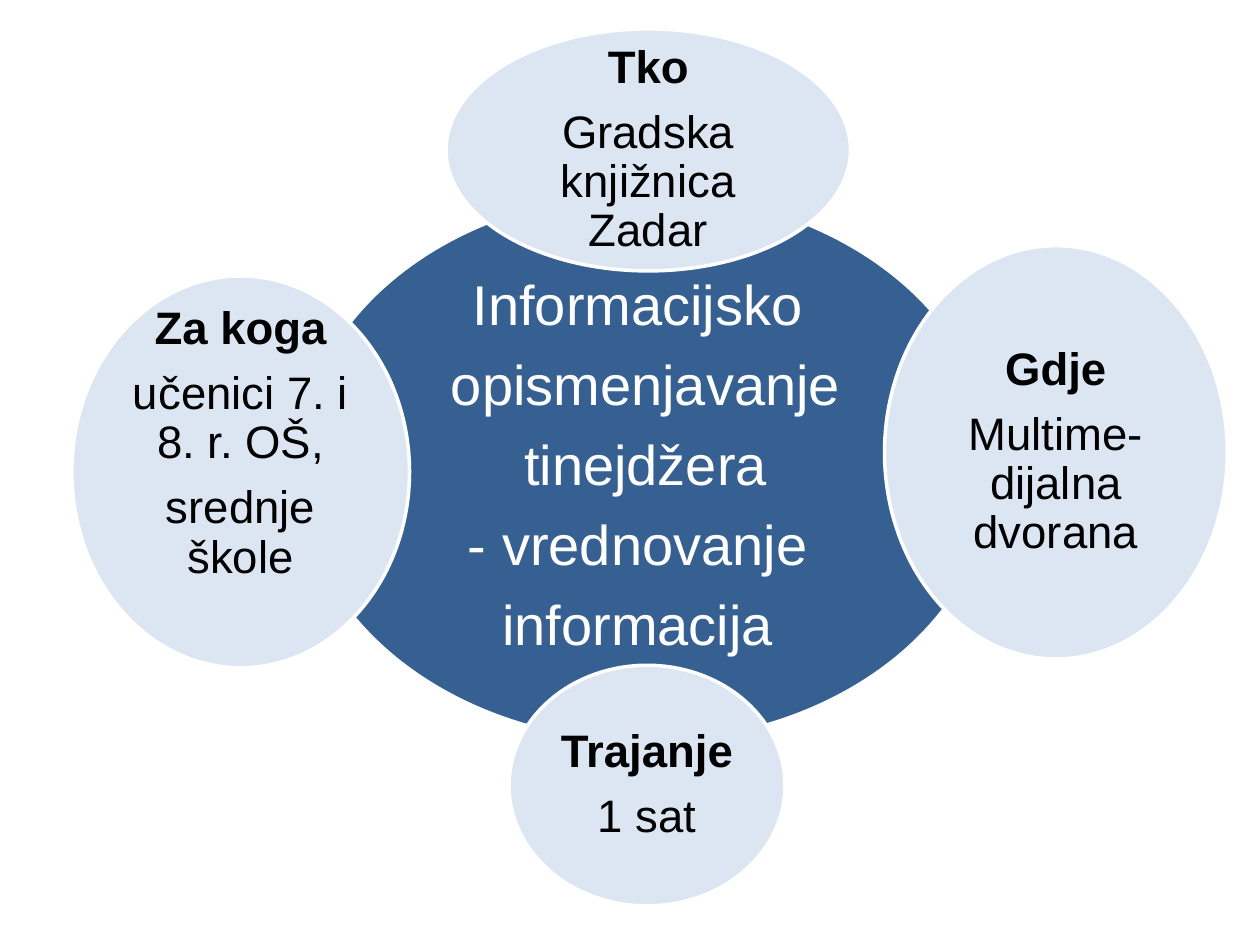
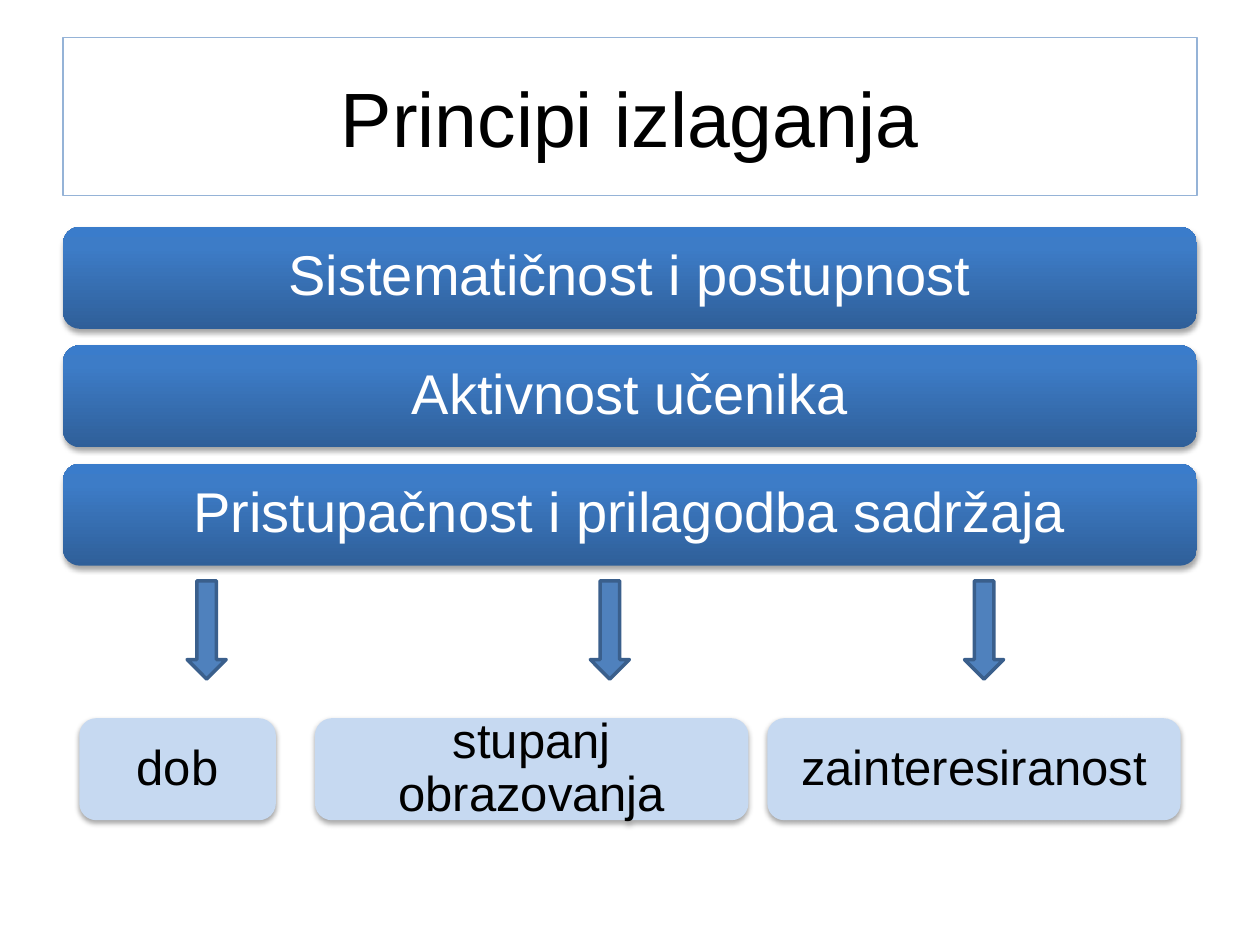
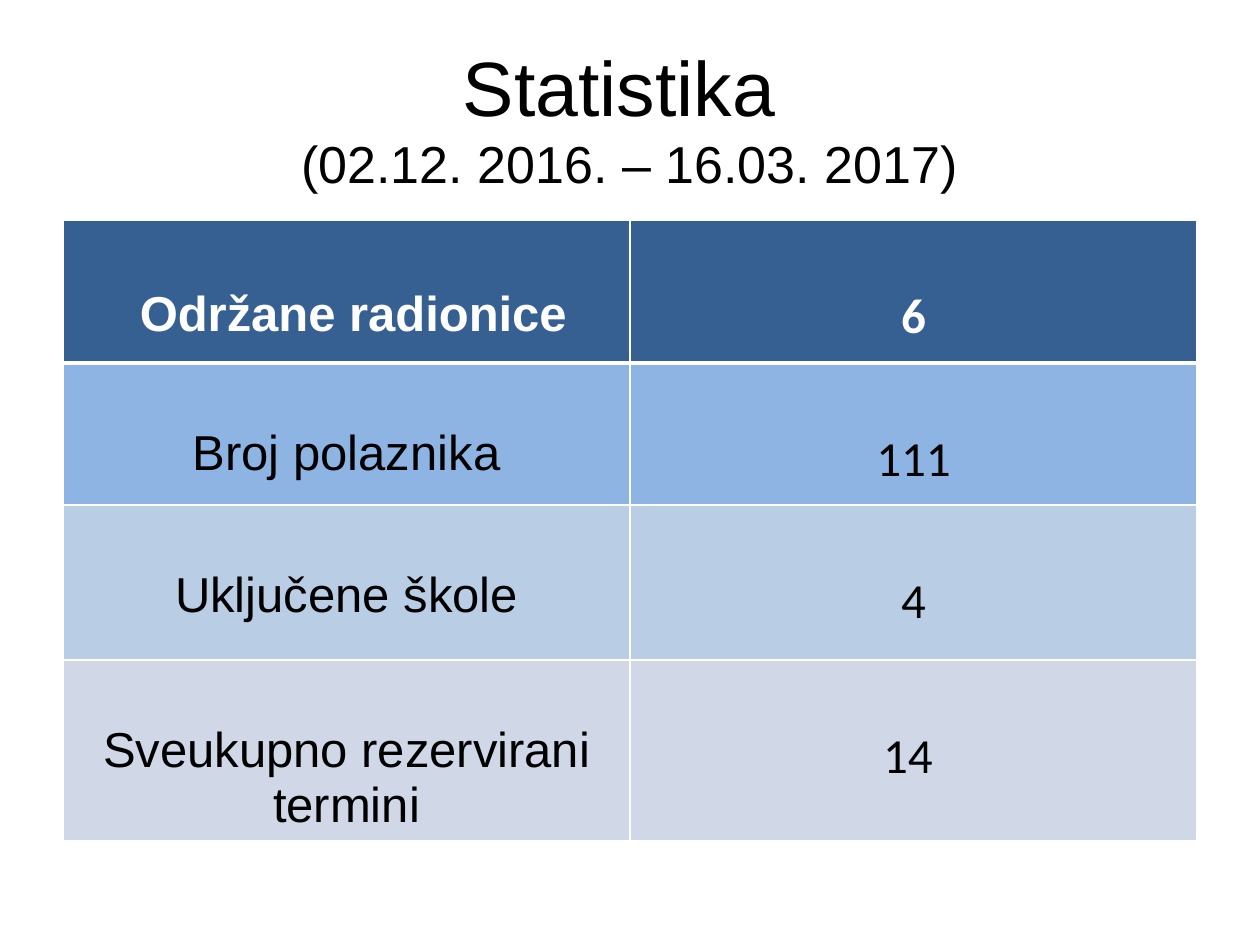
import copy

import pptx
import pptx.dml.color
import pptx.enum.shapes
import pptx.enum.text
import pptx.oxml
import pptx.oxml.ns
import pptx.util

Inches = pptx.util.Inches
Pt = pptx.util.Pt
SHAPES = pptx.enum.shapes.MSO_SHAPE
qn = pptx.oxml.ns.qn

COLORS = {
    "black": "000000",
    "white": "FFFFFF",
    "navy": "376092",
    "pale": "DCE6F2",
    "light": "C6D9F1",
    "frame": "95B3D7",
    "arrow": "4F81BD",
    "arrow_edge": "3A5F8C",
    "row_1": "8EB4E3",
    "row_2": "B9CDE5",
    "row_3": "D0D8E8",
}
BAR_GRADIENT = [(0, "2F5F99"), (0.8, "3D7CC7"), (1, "3A7CCB")]
DRAWING_NS = 'xmlns:a="http://schemas.openxmlformats.org/drawingml/2006/main"'
SHADOW = (
    f'<a:effectLst {DRAWING_NS}><a:outerShdw blurRad="{Pt(3.1)}" dist="{Pt(1.8)}" '
    'dir="5400000" rotWithShape="0"><a:srgbClr val="000000"><a:alpha val="35000"/>'
    "</a:srgbClr></a:outerShdw></a:effectLst>"
)


def rgb(value):
    return pptx.dml.color.RGBColor.from_string(value)


class Deck:
    """Holds the presentation, its shared style and the current slide."""

    font = "Arial"

    def __init__(self):
        self.presentation = pptx.Presentation()
        self.presentation.slide_width = Inches(10)
        self.presentation.slide_height = Inches(7.5)
        self.slide = None

    def new_slide(self):
        self.slide = self.presentation.slides.add_slide(self.presentation.slide_layouts[6])

    def format_paragraph(self, paragraph, size, color, bold=False, font=None):
        paragraph.alignment = pptx.enum.text.PP_ALIGN.CENTER
        for run in paragraph.runs:
            run.font.name = font or self.font
            run.font.size = Pt(size)
            run.font.bold = bold
            run.font.color.rgb = rgb(COLORS[color])

    def title(self, text, sizes, framed=False):
        """Centred title; sizes gives the size of each of its lines."""
        box = self.slide.shapes.add_textbox(Inches(0.5), Inches(0.3), Inches(9), Inches(1.25))
        frame = box.text_frame
        frame.word_wrap = True
        frame.vertical_anchor = pptx.enum.text.MSO_ANCHOR.MIDDLE
        frame.text = text
        paragraph = frame.paragraphs[0]
        self.format_paragraph(paragraph, sizes[0], "black")
        for run, size in zip(paragraph.runs, sizes):
            run.font.size = Pt(size)
        if framed:
            box.line.color.rgb = rgb(COLORS["frame"])
            box.line.width = Pt(0.75)

    def shape(self, kind, left, top, width, height, fill=None, line=None):
        shape = self.slide.shapes.add_shape(
            kind, Inches(left), Inches(top), Inches(width), Inches(height))
        shape.shadow.inherit = False
        if fill:
            shape.fill.solid()
            shape.fill.fore_color.rgb = rgb(COLORS[fill])
        if line:
            shape.line.color.rgb = rgb(COLORS[line])
            shape.line.width = Pt(2)
        else:
            shape.line.fill.background()
        return shape

    def label(self, shape, lines, size, color, inset, bold_first=False):
        """Centred lines of text inside a shape."""
        frame = shape.text_frame
        frame.word_wrap = True
        frame.vertical_anchor = pptx.enum.text.MSO_ANCHOR.MIDDLE
        frame.margin_left = frame.margin_right = Inches(inset)
        frame.margin_top = frame.margin_bottom = Inches(inset)
        frame.text = "\n".join(lines)
        for index, paragraph in enumerate(frame.paragraphs):
            self.format_paragraph(paragraph, size, color, bold_first and index == 0)
            paragraph.line_spacing = 0.9
            paragraph.space_after = Pt(0.35 * size)

    def ellipse(self, box, lines, size, fill, color, bold_first=True):
        ellipse = self.shape(SHAPES.OVAL, *box, fill=fill, line="white")
        self.label(ellipse, lines, size, color, 0.02, bold_first)
        return ellipse

    def card(self, left, top, width, text, size, color, inset, fill=None):
        """Rounded box with a soft shadow; a gradient unless a fill is named."""
        card = self.shape(SHAPES.ROUNDED_RECTANGLE, left, top, width, 0.81, fill)
        if not fill:
            self.gradient(card)
        properties = card._element.spPr
        properties.replace(properties.find(qn("a:effectLst")), pptx.oxml.parse_xml(SHADOW))
        self.label(card, [text], size, color, inset)

    def gradient(self, shape):
        shape.fill.gradient()
        shape.fill.gradient_angle = 90
        first_stop = next(shape._element.iter(qn("a:gs")))
        first_stop.addnext(copy.deepcopy(first_stop))
        for stop, (position, color) in zip(shape.fill.gradient_stops, BAR_GRADIENT):
            stop.position = position
            stop.color.rgb = rgb(color)

    def borders(self, cell, bottom):
        properties = cell._tc.get_or_add_tcPr()
        for side, width in (("L", 1), ("R", 1), ("T", 1), ("B", bottom)):
            properties.append(pptx.oxml.parse_xml(
                f'<a:ln{side} {DRAWING_NS} w="{Pt(width)}"><a:solidFill>'
                f'<a:srgbClr val="{COLORS["white"]}"/></a:solidFill></a:ln{side}>'))

    def table(self, rows, heights, fills):
        """Two columns, labels and figures, under a bold first row."""
        table = self.slide.shapes.add_table(
            len(rows), 2, Inches(0.5), Inches(1.75), Inches(9), Inches(sum(heights))).table
        for row_index, (texts, height, fill) in enumerate(zip(rows, heights, fills)):
            table.rows[row_index].height = Inches(height)
            header = row_index == 0
            for column_index, text in enumerate(texts):
                figure = column_index == 1
                cell = table.cell(row_index, column_index)
                self.borders(cell, 3 if header else 1)
                cell.fill.solid()
                cell.fill.fore_color.rgb = rgb(COLORS[fill])
                cell.margin_top = Inches(0.53 if header or figure else 0.5)
                cell.margin_bottom = 0
                cell.text_frame.text = text
                self.format_paragraph(
                    cell.text_frame.paragraphs[0], 28, "white" if header else "black",
                    bold=header, font="Calibri" if figure else None)


def workshop_slide(deck):
    deck.new_slide()
    deck.ellipse(
        (2.36, 1.53, 5.53, 4.36),
        ["Informacijsko ", "opismenjavanje", "tinejdžera", "- vrednovanje ", "informacija "],
        32, "navy", "white", bold_first=False)
    satellites = [
        ((3.54, 0.23, 3.21, 1.92), ["Tko", "Gradska knjižnica Zadar"]),
        ((7.02, 1.95, 2.72, 3.28), ["Gdje", "Multime-dijalna dvorana"]),
        ((4.04, 5.28, 2.19, 1.91), ["Trajanje", "1 sat"]),
        ((0.57, 2.19, 2.68, 3.11), ["Za koga", "učenici 7. i 8. r. OŠ,", "srednje škole"]),
    ]
    for box, lines in satellites:
        audience = deck.ellipse(box, lines, 26, "pale", "black")
    audience.text_frame.margin_bottom = Inches(0.46)


def principles_slide(deck):
    deck.new_slide()
    deck.title("Principi izlaganja", [44], framed=True)
    principles = [
        "Sistematičnost i postupnost",
        "Aktivnost učenika",
        "Pristupačnost i prilagodba sadržaja",
    ]
    for index, text in enumerate(principles):
        deck.card(0.5, 1.8 + 0.94 * index, 9, text, 32, "white", 0.13)
    criteria = [
        (0.63, 1.56, "dob"),
        (2.5, 3.44, "stupanj obrazovanja"),
        (6.09, 3.28, "zainteresiranost"),
    ]
    for left, width, text in criteria:
        deck.card(left, 5.7, width, text, 28, "black", 0.12, "light")
    for center in (1.64, 4.84, 7.81):
        deck.shape(SHAPES.DOWN_ARROW, center - 0.155, 4.61, 0.31, 0.78, "arrow", "arrow_edge")


def statistics_slide(deck):
    deck.new_slide()
    deck.title("Statistika \v(02.12. 2016. – 16.03. 2017)", [44, 29.7])
    rows = [
        (" Održane radionice", "6"),
        ("Broj polaznika", "111"),
        ("Uključene škole", "4"),
        ("Sveukupno rezervirani termini", "14 "),
    ]
    deck.table(rows, [1.13, 1.13, 1.23, 1.4], ["navy", "row_1", "row_2", "row_3"])


def main():
    deck = Deck()
    workshop_slide(deck)
    principles_slide(deck)
    statistics_slide(deck)
    deck.presentation.save("out.pptx")


if __name__ == "__main__":
    main()
